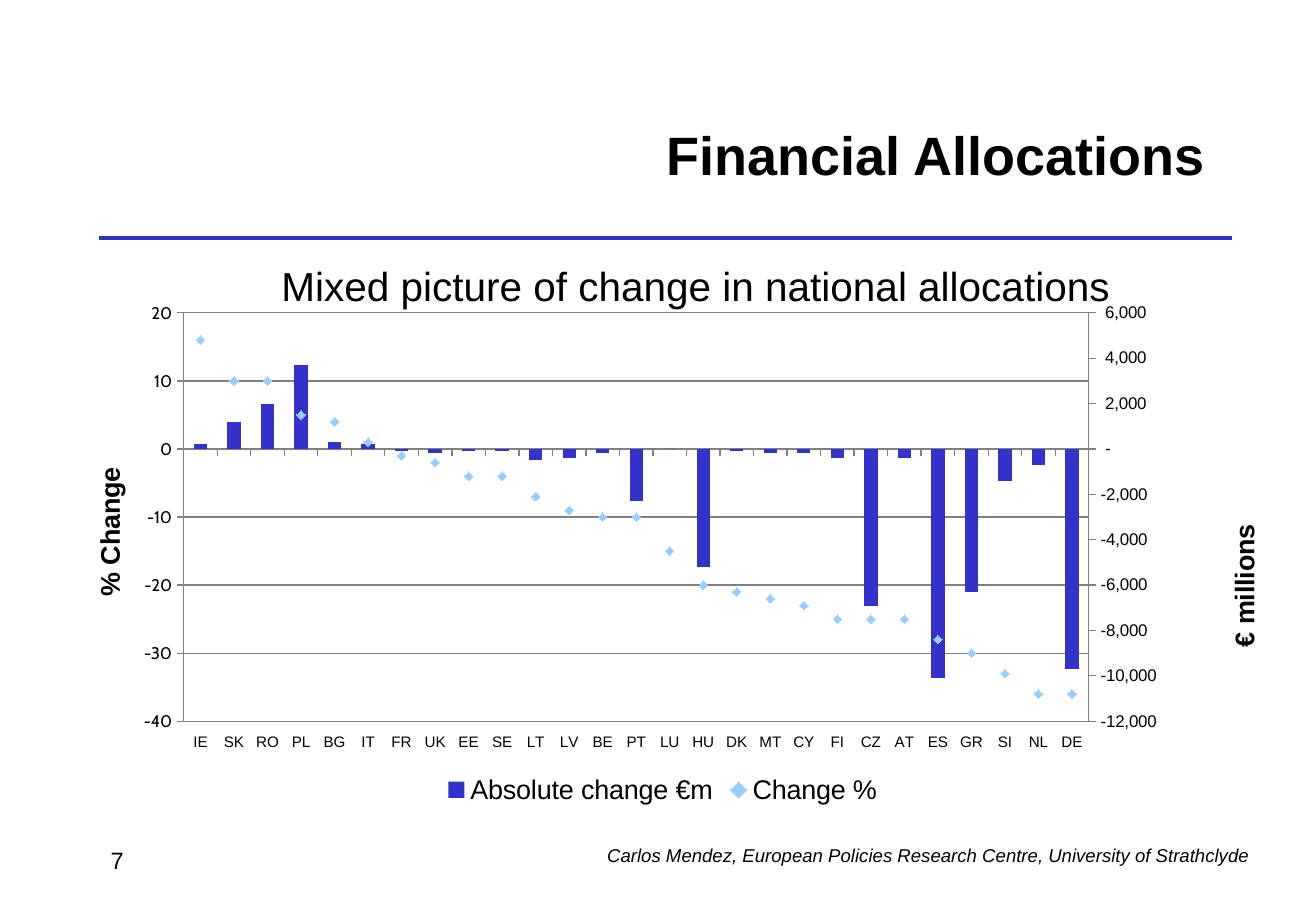
from copy import deepcopy

from pptx import Presentation
from pptx.chart import axis as axes
from pptx.chart.data import CategoryChartData
from pptx.dml.color import RGBColor
from pptx.enum import chart as kinds, shapes, text
from pptx.oxml import parse_xml
from pptx.oxml.ns import qn
from pptx.util import Pt

BLACK = RGBColor(0x00, 0x00, 0x00)
BLUE = RGBColor(0x33, 0x33, 0xCC)
SKY = RGBColor(0x99, 0xCC, 0xFF)
GREY = RGBColor(0x80, 0x80, 0x80)
CHART_NS = 'xmlns:c="http://schemas.openxmlformats.org/drawingml/2006/chart"'

COUNTRIES = ("IE SK RO PL BG IT FR UK EE SE LT LV BE PT LU HU DK MT CY FI "
             "CZ AT ES GR SI NL DE").split()
ABSOLUTE = (200, 1200, 2000, 3700, 300, 200, -100, -200, -100, -100, -500, -400,
            -200, -2300, 0, -5200, -100, -200, -200, -400, -6900, -400, -10100,
            -6300, -1400, -700, -9700)
PERCENT = (16, 10, 10, 5, 4, 1, -1, -2, -4, -4, -7, -9, -10, -10, -15, -20, -21,
           -22, -23, -25, -25, -25, -28, -30, -33, -36, -36)


def set_font(font, size, name="Arial", bold=False, italic=False):
    font.size, font.name = Pt(size), name
    font.bold, font.italic = bold, italic
    font.color.rgb = BLACK


def add_text(page, words, left, top, width, height, size, align=text.PP_ALIGN.LEFT,
             anchor=text.MSO_ANCHOR.TOP, bold=False, italic=False):
    box = page.shapes.add_textbox(Pt(left), Pt(top), Pt(width), Pt(height))
    frame = box.text_frame
    frame.word_wrap = True
    frame.vertical_anchor = anchor
    para = frame.paragraphs[0]
    para.alignment = align
    span = para.add_run()
    span.text = words
    set_font(span.font, size, bold=bold, italic=italic)


def add_rule(page, left, top, right):
    rule = page.shapes.add_connector(
        shapes.MSO_CONNECTOR.STRAIGHT, Pt(left), Pt(top), Pt(right), Pt(top))
    rule.line.color.rgb = BLUE
    rule.line.width = Pt(2)
    properties = rule._element.spPr
    properties.append(properties.makeelement(qn("a:effectLst"), {}))


def make_layout(**places):
    target = '<c:layoutTarget val="inner"/>' if places.pop("inner", False) else ""
    modes = "".join(f'<c:{key}Mode val="edge"/>' for key in "xy")
    sizes = "".join(f'<c:{key} val="{value}"/>' for key, value in places.items())
    return parse_xml(f"<c:layout {CHART_NS}><c:manualLayout>{target}{modes}{sizes}"
                     "</c:manualLayout></c:layout>")


def place(element, position, **places):
    for old in element.findall(qn("c:layout")):
        element.remove(old)
    element.insert(position, make_layout(**places))


def set_child(element, tag, value):
    element.find(qn(tag)).set("val", value)


def style_line(line):
    line.color.rgb = GREY
    line.width = Pt(0.75)


def style_value_axis(element, title, low, high, step, code, size, font, crosses, x, y):
    axis = axes.ValueAxis(element)
    axis.minimum_scale, axis.maximum_scale, axis.major_unit = low, high, step
    axis.major_tick_mark = kinds.XL_TICK_MARK.OUTSIDE
    axis.tick_labels.number_format = code
    axis.tick_labels.number_format_is_linked = False
    set_font(axis.tick_labels.font, size, font)
    style_line(axis.format.line)
    set_child(element, "c:crosses", crosses)
    frame = axis.axis_title.text_frame
    frame.text = title
    set_font(frame.paragraphs[0].runs[0].font, 16, bold=True)
    frame._txBody.bodyPr.set("rot", "-5400000")
    frame._txBody.bodyPr.set("vert", "horz")
    place(axis.axis_title._element, 1, x=x, y=y)
    return axis


def split_series(chart):
    plot_area = chart._chartSpace.chart.plotArea
    bars = plot_area.find(qn("c:barChart"))
    euro_cat, euro_val = plot_area.find(qn("c:catAx")), plot_area.find(qn("c:valAx"))
    percent_cat, percent_val = deepcopy(euro_cat), deepcopy(euro_val)
    for element, own, other in ((percent_cat, "101", "102"), (percent_val, "102", "101")):
        set_child(element, "c:axId", own)
        set_child(element, "c:crossAx", other)
        euro_cat.addprevious(element)
    lines = parse_xml(
        f'<c:lineChart {CHART_NS}><c:grouping val="standard"/><c:varyColors val="0"/>'
        '<c:marker val="1"/><c:axId val="101"/><c:axId val="102"/></c:lineChart>')
    change = bars.findall(qn("c:ser"))[1]
    for flag in change.findall(qn("c:invertIfNegative")):
        change.remove(flag)
    lines.insert(2, change)
    bars.addnext(lines)
    place(plot_area, 0, inner=True, x=0.1055, y=0.039, w=0.7456, h=0.79)
    return euro_cat, euro_val, percent_cat, percent_val


def style_series(chart):
    columns, points = chart.plots
    columns.gap_width = 150
    columns.vary_by_categories = False
    absolute, change = columns.series[0], points.series[0]
    absolute.invert_if_negative = False
    absolute.format.fill.solid()
    absolute.format.fill.fore_color.rgb = BLUE
    change.smooth = False
    change.format.line.fill.background()
    change.marker.style = kinds.XL_MARKER_STYLE.DIAMOND
    change.marker.size = 5
    change.marker.format.fill.solid()
    change.marker.format.fill.fore_color.rgb = SKY
    change.marker.format.line.color.rgb = SKY


def add_allocations_chart(page, left, top, width, height):
    data = CategoryChartData()
    data.categories = COUNTRIES
    data.add_series("Absolute change €m", ABSOLUTE)
    data.add_series("Change %", PERCENT)
    chart = page.shapes.add_chart(
        kinds.XL_CHART_TYPE.COLUMN_CLUSTERED, Pt(left), Pt(top), Pt(width), Pt(height),
        data).chart
    chart.has_title = False
    set_font(chart.font, 10, "Cabin")
    euro_cat, euro_val, percent_cat, percent_val = split_series(chart)
    style_series(chart)

    axes.CategoryAxis(euro_cat).visible = False
    countries = axes.CategoryAxis(percent_cat)
    countries.tick_label_position = kinds.XL_TICK_LABEL_POSITION.LOW
    countries.major_tick_mark = kinds.XL_TICK_MARK.OUTSIDE
    set_font(countries.tick_labels.font, 9)
    style_line(countries.format.line)

    euros = style_value_axis(euro_val, "€ millions", -12000, 6000, 2000,
                             '_-#,##0;-#,##0;_-"-"', 10, "Arial", "max", 0.961, 0.439)
    euros.has_major_gridlines = False
    percent = style_value_axis(percent_val, "% Change", -40, 20, 10,
                               "0", 10, "Cabin", "min", 0.0265, 0.329)
    percent.has_major_gridlines = True
    style_line(percent.major_gridlines.format.line)

    chart.has_legend = True
    chart.legend.position = kinds.XL_LEGEND_POSITION.BOTTOM
    chart.legend.include_in_layout = False
    set_font(chart.legend.font, 16)


def main():
    deck = Presentation()
    deck.slide_width, deck.slide_height = Pt(780), Pt(540)
    page = deck.slides.add_slide(deck.slide_layouts[6])
    add_rule(page, 58.5, 141, 730)
    add_text(page, "Financial Allocations", 58.5, 43, 663, 96, 32, bold=True,
             align=text.PP_ALIGN.RIGHT, anchor=text.MSO_ANCHOR.MIDDLE)
    add_text(page, "7", 58.5, 498, 65, 24, 14)
    add_text(page, "Carlos Mendez, European Policies Research Centre, University of Strathclyde",
             138, 497, 610, 26, 11, align=text.PP_ALIGN.RIGHT, italic=True)
    add_allocations_chart(page, 33, 173.5, 719.5, 306.5)
    add_text(page, "Mixed picture of change in national allocations",
             83.5, 151, 657.5, 36, 24, align=text.PP_ALIGN.CENTER)
    deck.save("out.pptx")


if __name__ == "__main__":
    main()
